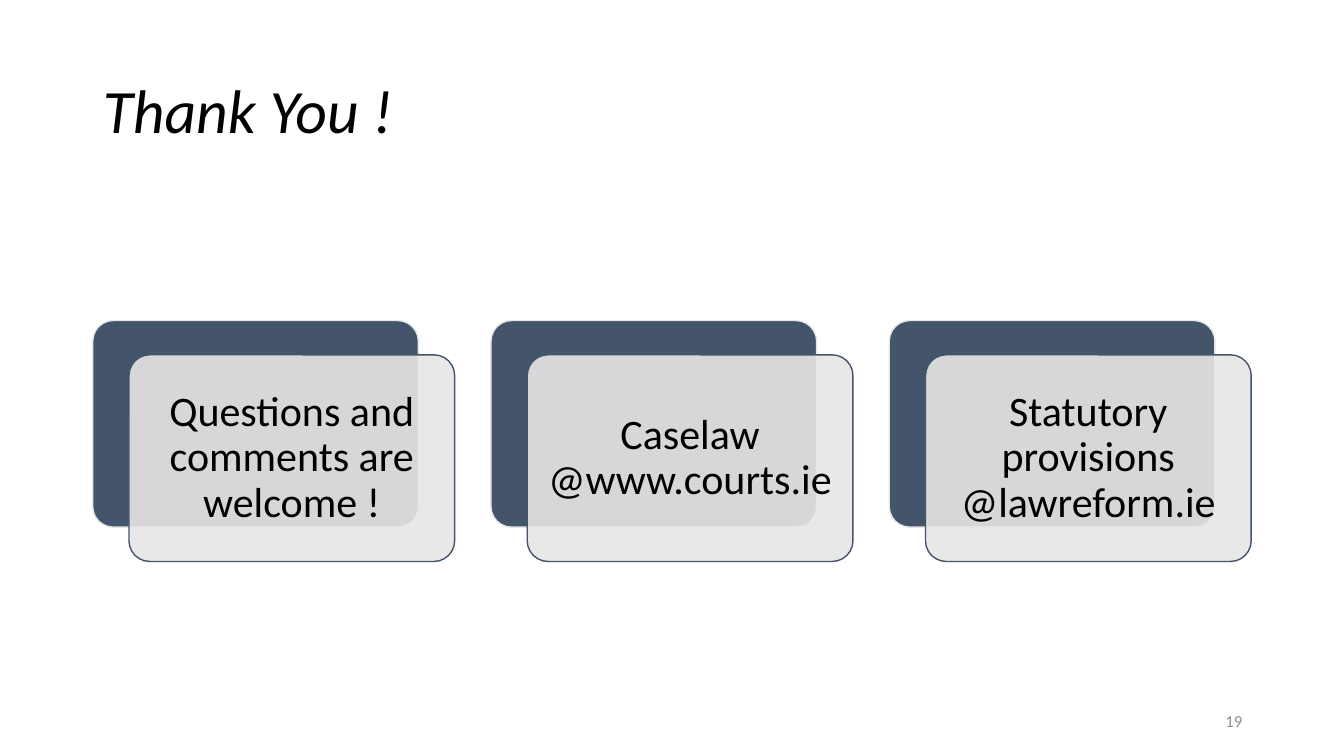
from lxml.etree import SubElement
from pptx import Presentation
from pptx.dml.color import RGBColor
from pptx.enum.shapes import MSO_SHAPE as Shape
from pptx.enum.text import MSO_ANCHOR as Anchor, MSO_AUTO_SIZE as AutoSize, PP_ALIGN as Align
from pptx.oxml.ns import qn
from pptx.util import Inches, Pt

NAVY = RGBColor(0x44, 0x54, 0x6A)
PALE = RGBColor(0xE7, 0xE6, 0xE6)
BLACK = RGBColor(0x00, 0x00, 0x00)
GREY = RGBColor(0x8C, 0x8C, 0x8C)

MESSAGES = (
    "Questions and comments are welcome !",
    "Caselaw @www.courts.ie",
    "Statutory provisions @lawreform.ie",
)


class ClosingSlide:
    """Holds the style, the card grid and the current slide."""

    font = "Calibri"
    left, top = 0.92, 3.18
    column = 3.95
    card_size = 3.23, 2.05
    offset_x, offset_y = 0.36, 0.34

    def __init__(self, deck):
        self.slide = deck.slides.add_slide(deck.slide_layouts[5])

    def style_text(self, frame, text, size, color, align, italic=False, spacing=0.9):
        frame.text = text
        frame.word_wrap = True
        frame.auto_size = AutoSize.NONE
        frame.vertical_anchor = Anchor.MIDDLE
        paragraph = frame.paragraphs[0]
        paragraph.alignment = align
        paragraph.line_spacing = spacing
        font = paragraph.runs[0].font
        font.name, font.size, font.italic = self.font, Pt(size), italic
        font.color.rgb = color

    def title(self, text):
        heading = self.slide.shapes.title
        heading.left, heading.top = Inches(self.left), Inches(0.4)
        heading.width, heading.height = Inches(11.5), Inches(1.45)
        self.style_text(heading.text_frame, text, 44, BLACK, Align.LEFT, italic=True)

    def page_number(self, number):
        footer = self.slide.shapes.add_textbox(
            Inches(9.42), Inches(6.95), Inches(3), Inches(0.4))
        self.style_text(footer.text_frame, str(number), 12, GREY, Align.RIGHT, spacing=1.0)

    def panel(self, x, y, fill, line):
        panel = self.slide.shapes.add_shape(
            Shape.ROUNDED_RECTANGLE, Inches(x), Inches(y), *map(Inches, self.card_size))
        panel.adjustments[0] = 0.1
        panel.shadow.inherit = False
        panel.fill.solid()
        panel.fill.fore_color.rgb = fill
        panel.line.color.rgb = line
        panel.line.width = Pt(1)
        return panel

    def card(self, index, message):
        x = self.left + index * self.column
        self.panel(x, self.top, NAVY, PALE)
        front = self.panel(x + self.offset_x, self.top + self.offset_y, PALE, NAVY)
        tint = front.element.spPr.find(qn("a:solidFill"))[0]
        SubElement(tint, qn("a:alpha"), val="90000")
        frame = front.text_frame
        frame.margin_left = frame.margin_right = Inches(0.12)
        frame.margin_top = frame.margin_bottom = Inches(0.12)
        self.style_text(frame, message, 30, BLACK, Align.CENTER)


def main():
    deck = Presentation()
    deck.slide_width, deck.slide_height = Inches(13.33), Inches(7.5)
    closing = ClosingSlide(deck)
    closing.title("Thank You !")
    for index, message in enumerate(MESSAGES):
        closing.card(index, message)
    closing.page_number(19)
    deck.save("out.pptx")


if __name__ == "__main__":
    main()
